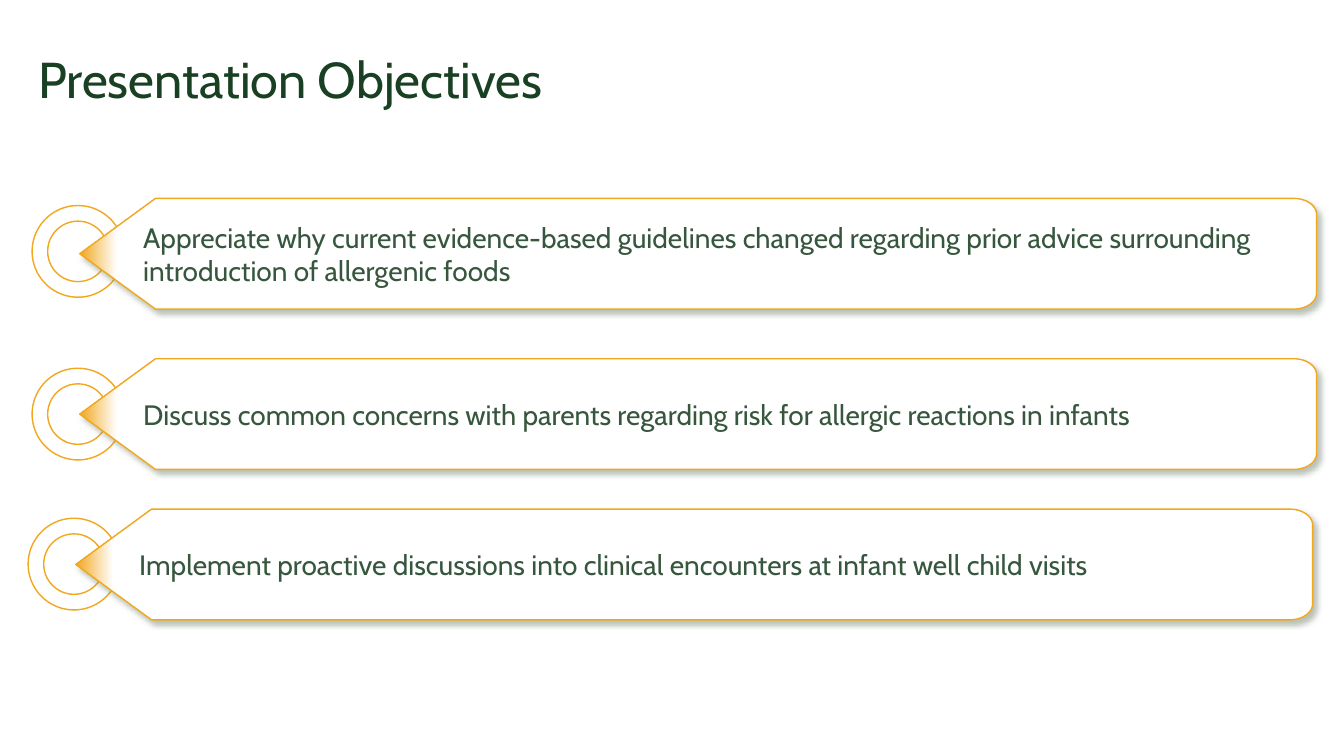
from math import cos, pi, sin

from lxml import etree
from pptx import Presentation
from pptx.dml.color import RGBColor
from pptx.enum.shapes import MSO_SHAPE
from pptx.enum.text import MSO_ANCHOR, MSO_AUTO_SIZE, PP_ALIGN
from pptx.oxml.ns import qn
from pptx.util import Cm, Pt

DONUT = MSO_SHAPE.DONUT
MIDDLE = MSO_ANCHOR.MIDDLE
LEFT = PP_ALIGN.LEFT
NO_AUTOFIT = MSO_AUTO_SIZE.NONE

COLORS = {
    "title": "1A4023",
    "body": "36573D",
    "accent": "F1A71E",
    "paper": "FFFFFF",
    "shadow": "758572",
}

# left edge, banner top, ring top (cm), wording
OBJECTIVES = [
    (0.81, 5.0, 5.18, "Appreciate why current evidence-based guidelines changed "
     "regarding prior advice surrounding introduction of allergenic foods"),
    (0.81, 9.04, 9.28, "Discuss common concerns with parents regarding risk for "
     "allergic reactions in infants"),
    (0.71, 12.83, 13.06, "Implement proactive discussions into clinical encounters "
     "at infant well child visits"),
]
BANNER_OFFSET = 1.2


def rgb(name):
    return RGBColor.from_string(COLORS[name])


def add_alpha(color_element, percent):
    etree.SubElement(color_element, qn("a:alpha"), val=str(percent * 1000))


def banner_outline(left, top, width=31.17, height=2.79):
    """Points in cm: an arrow tip at the left, rounded corners at the right."""
    tip, radius_x, radius_y, steps = 1.91, 0.58, 0.4, 12
    right, bottom = left + width, top + height
    points = [(left, top + height / 2), (left + tip, top)]
    for center_y, start in ((top + radius_y, -pi / 2), (bottom - radius_y, 0)):
        for step in range(steps + 1):
            angle = start + step * pi / 2 / steps
            points.append((right - radius_x + radius_x * cos(angle),
                           center_y + radius_y * sin(angle)))
    return points + [(left + tip, bottom)]


class ObjectivesSlide:
    font = "Cabin"

    def __init__(self, deck):
        self.page = deck.slides.add_slide(deck.slide_layouts[5])

    def set_text(self, frame, text, size, color):
        frame.word_wrap = True
        frame.vertical_anchor = MIDDLE
        para = frame.paragraphs[0]
        para.text = text
        para.alignment = LEFT
        para.font.name = self.font
        para.font.size = Pt(size)
        para.font.color.rgb = rgb(color)
        return para

    def outline(self, shape):
        shape.line.color.rgb = rgb("accent")
        shape.line.width = Pt(1)
        shape.shadow.inherit = False

    def title(self, text):
        box = self.page.shapes.title
        box.left, box.top, box.width, box.height = Cm(0.71), Cm(0.48), Cm(32.46), Cm(3.18)
        box.text_frame.auto_size = NO_AUTOFIT
        self.set_text(box.text_frame, text, 36, "title").line_spacing = 0.9

    def ring(self, left, top, size=2.31):
        ring = self.page.shapes.add_shape(DONUT, Cm(left), Cm(top), Cm(size), Cm(size))
        ring.adjustments[0] = 0.17
        ring.fill.solid()
        ring.fill.fore_color.rgb = rgb("paper")
        add_alpha(ring.element.spPr.find(qn("a:solidFill"))[0], 50)
        self.outline(ring)

    def banner(self, left, top, text):
        points = [(Cm(x), Cm(y)) for x, y in banner_outline(left, top)]
        builder = self.page.shapes.build_freeform(*points[0])
        builder.add_line_segments(points[1:], close=True)
        banner = builder.convert_to_shape()
        banner.fill.gradient()
        banner.fill.gradient_angle = 0
        stops = zip(banner.fill.gradient_stops, ((0, "accent"), (0.03, "paper")))
        for stop, (position, color) in stops:
            stop.position = position
            stop.color.rgb = rgb(color)
        self.outline(banner)
        self.cast_shadow(banner)
        frame = banner.text_frame
        frame.margin_left, frame.margin_right = Cm(1.6), Cm(0.36)
        frame.margin_top = frame.margin_bottom = Cm(0.2)
        self.set_text(frame, text, 20, "body")

    def cast_shadow(self, shape):
        effects = shape.element.spPr.find(qn("a:effectLst"))
        shadow = etree.SubElement(
            effects, qn("a:outerShdw"), blurRad=str(Pt(4)), dist=str(Pt(3)),
            dir=str(45 * 60000), algn="tl", rotWithShape="0")
        add_alpha(etree.SubElement(shadow, qn("a:srgbClr"), val=COLORS["shadow"]), 50)


def main():
    deck = Presentation()
    deck.slide_width, deck.slide_height = Cm(33.87), Cm(19.05)
    slide = ObjectivesSlide(deck)
    slide.title("Presentation Objectives")
    for left, banner_top, ring_top, text in OBJECTIVES:
        slide.ring(left, ring_top)
        slide.banner(left + BANNER_OFFSET, banner_top, text)
    deck.save("out.pptx")


if __name__ == "__main__":
    main()
